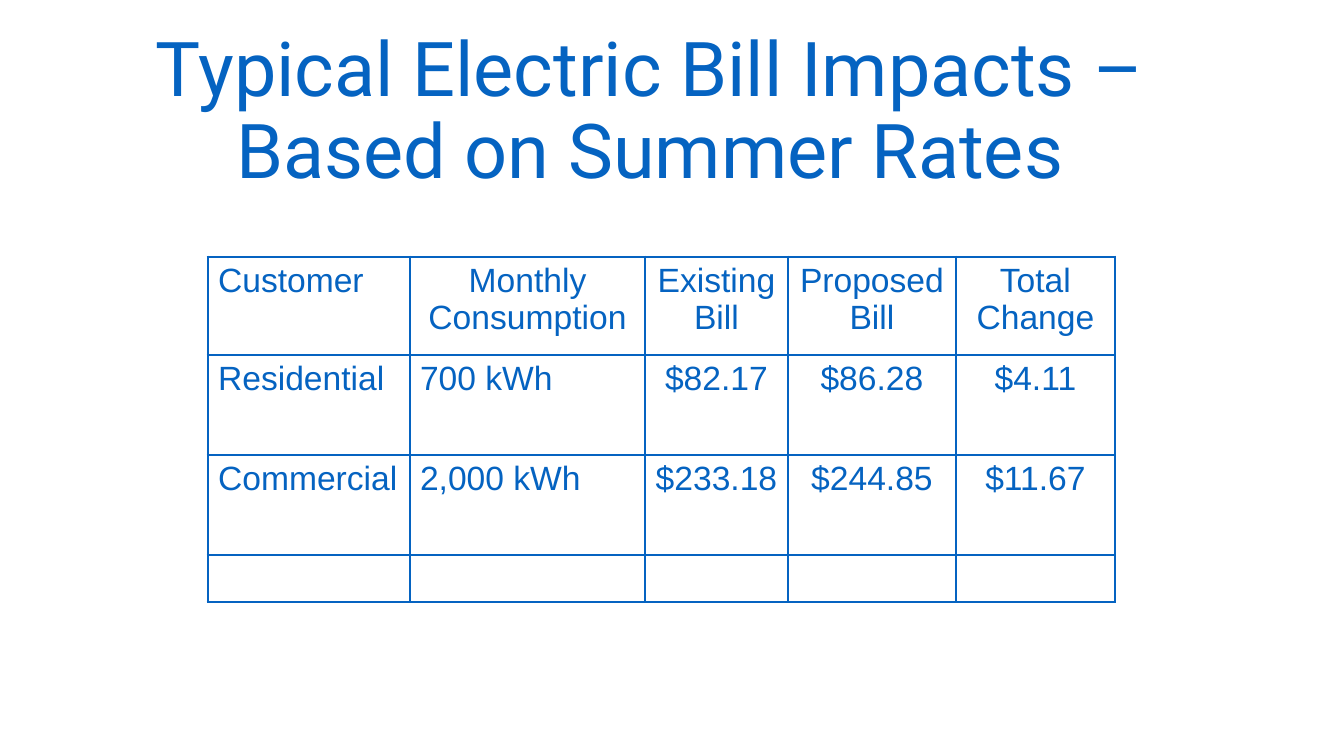
from dataclasses import dataclass

from pptx import Presentation
from pptx import util as u
from pptx.dml.color import RGBColor
from pptx.enum import text
from pptx.oxml import parse_xml
from pptx.oxml.ns import nsdecls

EMU_PER_PX = 12192000 / 1344


def px(n: int) -> u.Emu:
    return u.Emu(round(n * EMU_PER_PX))


@dataclass(frozen=True)
class Theme:
    blue: str = "0563C1"
    title_font: str = "Roboto"
    table_font: str = "Arial"
    title_size: int = 54
    table_size: int = 24
    outer_line: float = 2.25
    inner_line: float = 1


@dataclass(frozen=True)
class Column:
    width: int
    entries: tuple[str, ...]
    align: text.PP_ALIGN = text.PP_ALIGN.CENTER
    header_align: text.PP_ALIGN = text.PP_ALIGN.CENTER


THEME = Theme()
LEFT, CENTER = text.PP_ALIGN.LEFT, text.PP_ALIGN.CENTER
TITLE = "Typical Electric Bill Impacts – Based on Summer Rates"
ROW_HEIGHTS = (98, 100, 100, 47)
COLUMNS = (
    Column(202, ("Customer", "Residential", "Commercial"), LEFT, LEFT),
    Column(235, ("Monthly Consumption", "700 kWh", "2,000 kWh"), LEFT),
    Column(143, ("Existing Bill", "$82.17", "$233.18")),
    Column(168, ("Proposed Bill", "$86.28", "$244.85")),
    Column(159, ("Total Change", "$4.11", "$11.67")),
)


def write(tf, content: str, font: str, size: int, align: text.PP_ALIGN):
    p = tf.paragraphs[0]
    p.alignment = align
    r = p.add_run()
    r.text = content
    for name, value in {"name": font, "size": u.Pt(size), "bold": False}.items():
        setattr(r.font, name, value)
    r.font.color.rgb = RGBColor.from_string(THEME.blue)
    return p


def draw_borders(cell, on_edge: dict[str, bool]) -> None:
    """Thick lines on the outer edges of the table, thin lines inside."""
    tc_pr = cell._tc.get_or_add_tcPr()
    for i, (side, outer) in enumerate(on_edge.items()):
        width = u.Pt(THEME.outer_line if outer else THEME.inner_line)
        tc_pr.insert(i, parse_xml(
            f'<a:ln{side} {nsdecls("a")} w="{width}" cap="flat" cmpd="sng">'
            f'<a:solidFill><a:srgbClr val="{THEME.blue}"/></a:solidFill>'
            f'<a:prstDash val="solid"/></a:ln{side}>'))


def add_title(slide) -> None:
    sp = slide.shapes.title
    place = {"left": 50, "top": 34, "width": 1200, "height": 166}
    for name, value in place.items():
        setattr(sp, name, px(value))
    tf = sp.text_frame
    settings = {"word_wrap": True, "auto_size": text.MSO_AUTO_SIZE.NONE,
                "vertical_anchor": text.MSO_ANCHOR.BOTTOM}
    for name, value in settings.items():
        setattr(tf, name, value)
    p = write(tf, TITLE, THEME.title_font, THEME.title_size, CENTER)
    p.line_spacing = 0.9


def add_bill_table(slide, left: int, top: int) -> None:
    width = sum(column.width for column in COLUMNS)
    frame = slide.shapes.add_table(
        len(ROW_HEIGHTS), len(COLUMNS),
        px(left), px(top), px(width), px(sum(ROW_HEIGHTS)))
    table = frame.table
    table.first_row = table.horz_banding = False
    for row, height in zip(table.rows, ROW_HEIGHTS):
        row.height = px(height)

    last_row, last_col = len(ROW_HEIGHTS) - 1, len(COLUMNS) - 1
    for c, column in enumerate(COLUMNS):
        table.columns[c].width = px(column.width)
        for r in range(len(ROW_HEIGHTS)):
            cell = table.cell(r, c)
            cell.fill.background()
            draw_borders(cell, {"L": c == 0, "R": c == last_col,
                                "T": r == 0, "B": r == last_row})
            if r < len(column.entries):
                align = column.align if r else column.header_align
                write(cell.text_frame, column.entries[r],
                      THEME.table_font, THEME.table_size, align)


def main() -> None:
    prs = Presentation()
    prs.slide_width, prs.slide_height = px(1344), px(756)
    slide = prs.slides.add_slide(prs.slide_layouts[5])  # title only
    add_title(slide)
    add_bill_table(slide, left=208, top=257)
    prs.save("out.pptx")


if __name__ == "__main__":
    main()
